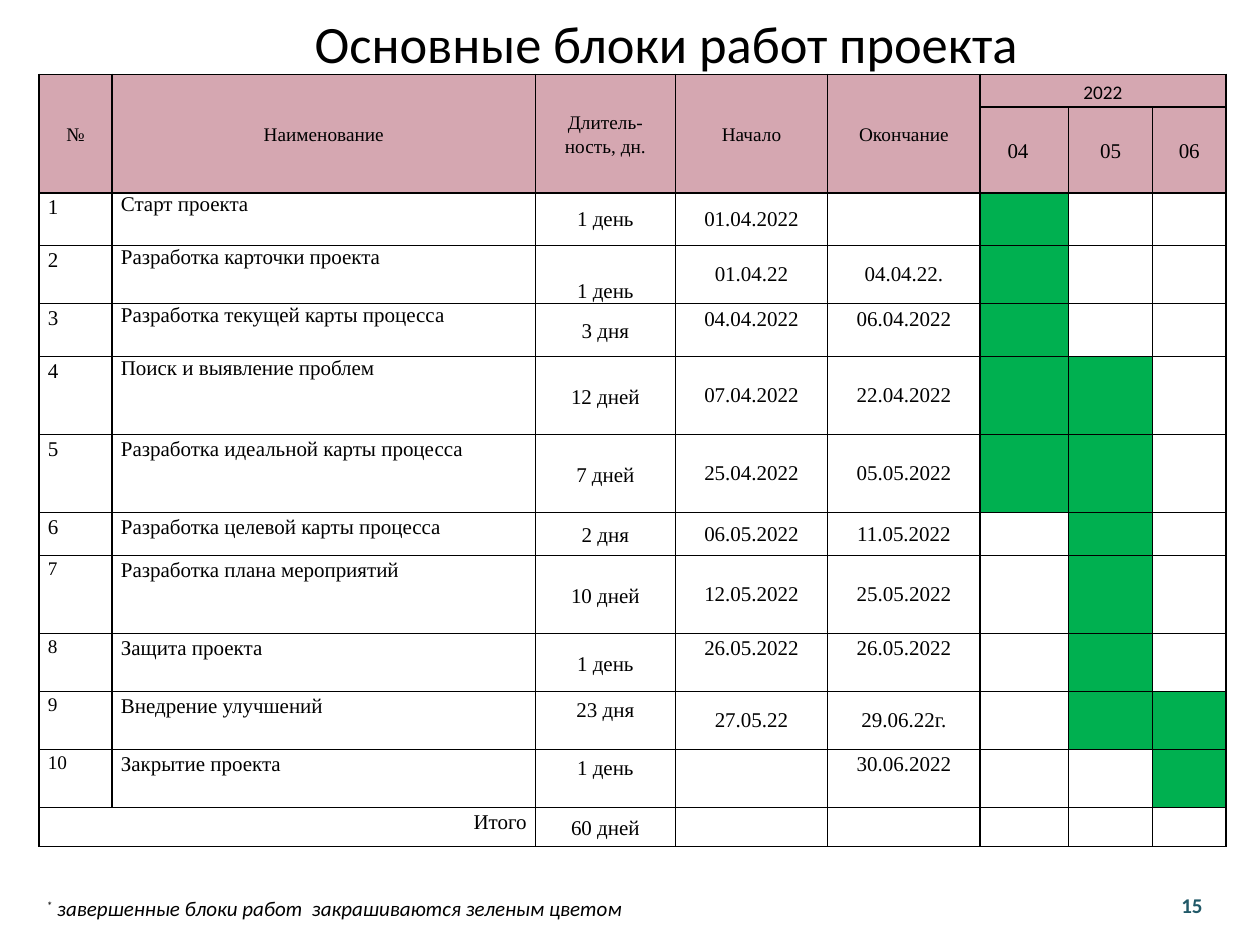
import pptx
import pptx.dml.color
import pptx.enum.text
import pptx.util
from lxml import etree

Inches = pptx.util.Inches
Pt = pptx.util.Pt
ALIGN = pptx.enum.text.PP_ALIGN
ANCHOR = pptx.enum.text.MSO_ANCHOR

TITLE = "Основные блоки работ проекта"
NOTE = " завершенные блоки работ  закрашиваются зеленым цветом"
HEADERS = ["№", "Наименование", "Длитель-\nность, дн.", "Начало", "Окончание"]
YEAR, MONTHS = "2022", ["04", "05", "06"]
TASKS = [
    ("Старт проекта", "1 день", "01.04.2022", "", ["04"]),
    ("Разработка карточки проекта", "1 день", "01.04.22", "04.04.22.", ["04"]),
    ("Разработка текущей карты процесса", "3 дня", "04.04.2022", "06.04.2022", ["04"]),
    ("Поиск и выявление проблем", "12 дней", "07.04.2022", "22.04.2022", ["04", "05"]),
    ("Разработка идеальной карты процесса", "7 дней", "25.04.2022", "05.05.2022", ["04", "05"]),
    ("Разработка целевой карты процесса", "2 дня", "06.05.2022", "11.05.2022", ["05"]),
    ("Разработка плана мероприятий", "10 дней", "12.05.2022", "25.05.2022", ["05"]),
    ("Защита проекта", "1 день", "26.05.2022", "26.05.2022", ["05"]),
    ("Внедрение улучшений", "23 дня", "27.05.22", "29.06.22г.", ["05", "06"]),
    ("Закрытие проекта", "1 день", "", "30.06.2022", ["06"]),
]
TOTAL = ("Итого", "60 дней")
COLS = [0.58, 3.36, 1.11, 1.21, 1.21, 0.7, 0.67, 0.58]
ROWS = [0.26, 0.68, 0.42, 0.46, 0.42, 0.62, 0.62, 0.34, 0.62, 0.46, 0.46, 0.46, 0.31]
RAISED = {(3, 3), (3, 4), (8, 3), (8, 4), (9, 2), (10, 2), (10, 4)}
PINK, GREEN, WHITE, BLACK, TEAL = "D5A7B1", "00B050", "FFFFFF", "000000", "215968"
SERIF, SANS = "Times New Roman", "Calibri"


def rgb(value):
    """Turn a hex string into a colour."""
    return pptx.dml.color.RGBColor.from_string(value)


def write(tf, text, size=12, font=SERIF, color=BLACK, align=ALIGN.LEFT,
          bold=False, italic=False, spacing=None):
    """Fill a text frame, one paragraph per line, and return the last one."""
    for i, line in enumerate(text.split("\n")):
        p = tf.add_paragraph() if i else tf.paragraphs[0]
        p.alignment = align
        p.line_spacing = spacing
        r = p.add_run()
        r.text = line
        f = r.font
        f.size, f.name, f.bold, f.italic = Pt(size), font, bold, italic
        f.color.rgb = rgb(color)
    return p


def style_cell(cell, fill):
    """Set the fill, margins and black border of a table cell."""
    cell.fill.solid()
    cell.fill.fore_color.rgb = rgb(fill)
    cell.margin_left = cell.margin_right = Inches(0.07)
    cell.margin_top = cell.margin_bottom = 0
    ns = "http://schemas.openxmlformats.org/drawingml/2006/main"
    for i, side in enumerate("LRTB"):
        cell._tc.tcPr.insert(i, etree.fromstring(
            f'<a:ln{side} xmlns:a="{ns}" w="12700"><a:solidFill>'
            f'<a:srgbClr val="{BLACK}"/></a:solidFill></a:ln{side}>'))


def put(cell, text, anchor=ANCHOR.MIDDLE, align=ALIGN.CENTER, **fmt):
    """Write text in a table cell with the given anchor."""
    cell.vertical_anchor = anchor
    if text:
        write(cell.text_frame, text, align=align, **fmt)


def add_box(s, left, top, width, height):
    """Add a wrapping text box and return its frame."""
    tf = s.shapes.add_textbox(*map(Inches, (left, top, width, height))).text_frame
    tf.word_wrap = True
    return tf


def add_plan(s):
    """Add the work plan table."""
    table = s.shapes.add_table(len(ROWS), len(COLS), Inches(0.31), Inches(0.59),
                               Inches(sum(COLS)), Inches(sum(ROWS))).table
    for col, width in zip(table.columns, COLS):
        col.width = Inches(width)
    for i, height in enumerate(ROWS):
        table.rows[i].height = Inches(height)
        for cell in table.rows[i].cells:
            style_cell(cell, PINK if i < 2 else WHITE)

    for c, text in enumerate(HEADERS):
        table.cell(0, c).merge(table.cell(1, c))
        put(table.cell(0, c), text, size=11, spacing=1.15)
    first = len(HEADERS)
    table.cell(0, first).merge(table.cell(0, len(COLS) - 1))
    put(table.cell(0, first), YEAR, size=11, font=SANS, spacing=1.15)
    for c, month in enumerate(MONTHS, first):
        put(table.cell(1, c), month, spacing=1.15)
    table.cell(1, first).margin_right = Inches(0.17)

    for n, (name, days, start, end, done) in enumerate(TASKS, 1):
        row = n + 1
        put(table.cell(row, 0), str(n), ANCHOR.TOP, ALIGN.LEFT,
            size=11 if n > 6 else 12, spacing=1.15)
        put(table.cell(row, 1), name, ANCHOR.TOP, ALIGN.LEFT,
            spacing=1.15 if n > 4 else None)
        for c, text in enumerate((days, start, end), 2):
            cell = table.cell(row, c)
            put(cell, text, spacing=1.15 if c == 2 and n > 1 else None)
            if (n, c) in RAISED:
                cell.vertical_anchor = ANCHOR.TOP
                cell.margin_top = Inches(0.03)
        for c, month in enumerate(MONTHS, first):
            if month in done:
                table.cell(row, c).fill.fore_color.rgb = rgb(GREEN)
    table.cell(3, 2).vertical_anchor = ANCHOR.BOTTOM

    last = len(ROWS) - 1
    table.cell(last, 0).merge(table.cell(last, 1))
    put(table.cell(last, 0), TOTAL[0], ANCHOR.TOP, ALIGN.RIGHT, spacing=1.15)
    put(table.cell(last, 2), TOTAL[1], spacing=1.15)


def main():
    """Build the slide and save it."""
    prs = pptx.Presentation()
    prs.slide_width, prs.slide_height = Inches(10), Inches(7.5)
    s = prs.slides.add_slide(prs.slide_layouts[5])

    sp = s.shapes.title
    sp.left, sp.top, sp.width, sp.height = map(Inches, (0.54, 0, 9.5, 0.68))
    sp.text_frame.vertical_anchor = ANCHOR.MIDDLE
    write(sp.text_frame, TITLE, size=30, font=SANS, align=ALIGN.CENTER)

    tf = add_box(s, 0.27, 7.06, 8.51, 0.3)
    p = write(tf, "*", font=SANS, italic=True)
    p.runs[0].font._element.set("baseline", "30000")
    r = p.add_run()
    r.text = NOTE
    r.font.size, r.font.name, r.font.italic = Pt(12), SANS, True
    r.font.color.rgb = rgb(BLACK)

    tf = add_box(s, 9.09, 7.03, 0.74, 0.31)
    tf.vertical_anchor = ANCHOR.MIDDLE
    write(tf, "15", font=SANS, color=TEAL, align=ALIGN.CENTER, bold=True)

    add_plan(s)
    prs.save("out.pptx")


if __name__ == "__main__":
    main()
